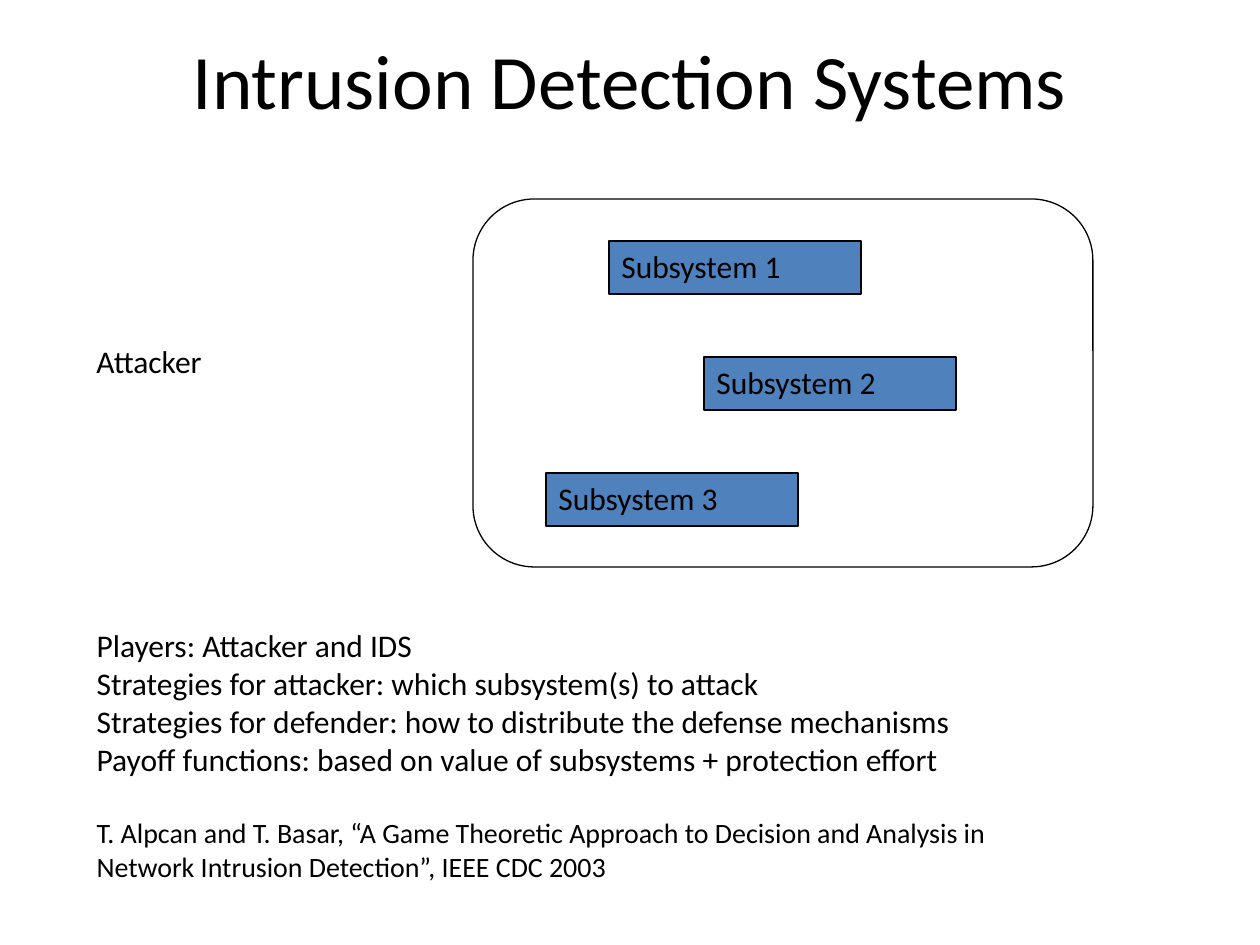
from dataclasses import dataclass

from pptx import Presentation
from pptx import util as u
from pptx.dml.color import RGBColor
from pptx.enum import shapes, text
from pptx.oxml.xmlchemy import OxmlElement

PX = 914400 / 126  # EMU per px


@dataclass(frozen=True)
class Theme:
    font: str = "Calibri"
    ink: RGBColor = RGBColor(0, 0, 0)
    block: RGBColor = RGBColor(0x4F, 0x81, 0xBD)
    title: int = 44
    body: int = 18
    cite: int = 16
    line: float = 0.75


T = Theme()
SUBSYSTEM_OFFSETS = (136, 231, 73)  # left edge inside the system outline
NOTES = (
    "Players: Attacker and IDS",
    "Strategies for attacker: which subsystem(s) to attack",
    "Strategies for defender: how to distribute the defense mechanisms",
    "Payoff functions: based on value of subsystems + protection effort",
)
CITATION = (
    "T. Alpcan and T. Basar, “A Game Theoretic Approach to Decision and Analysis in "
    "\vNetwork Intrusion Detection”, IEEE CDC 2003"
)


def emu(*lengths):
    return [u.Emu(round(n * PX)) for n in lengths]


def place(sp, box):
    sp.left, sp.top, sp.width, sp.height = emu(*box)


def style(p, size, align=text.PP_ALIGN.LEFT):
    p.alignment = align
    for r in p.runs:
        r.font.name, r.font.size = T.font, u.Pt(size)
        r.font.color.rgb = T.ink


def add_box(s, kind, box, fill=None):
    sp = s.shapes.add_shape(kind, *emu(*box))
    sp.shadow.inherit = False
    if fill is None:
        sp.fill.background()
    else:
        sp.fill.solid()
        sp.fill.fore_color.rgb = fill
    sp.line.color.rgb, sp.line.width = T.ink, u.Pt(T.line)
    return sp


def title(s, box):
    sp = s.shapes.title
    place(sp, box)
    tf = sp.text_frame
    tf.text = "Intrusion Detection Systems"
    tf.vertical_anchor = text.MSO_ANCHOR.MIDDLE
    style(tf.paragraphs[0], T.title, text.PP_ALIGN.CENTER)


def system(s, box):
    x, y, w, h = box
    # Subsystem blocks, evenly stepped down the outline
    for i, dx in enumerate(SUBSYSTEM_OFFSETS):
        sp = add_box(s, shapes.MSO_SHAPE.RECTANGLE,
                     (x + dx, y + 42 + i * 116, 252, 53), T.block)
        tf = sp.text_frame
        tf.text = f"Subsystem {i + 1}"
        tf.vertical_anchor = text.MSO_ANCHOR.TOP
        style(tf.paragraphs[0], T.body)
    # Outline around them
    add_box(s, shapes.MSO_SHAPE.ROUNDED_RECTANGLE, box)


def attacker(s, box):
    tf = s.shapes.add_textbox(*emu(*box)).text_frame
    tf.text = "Attacker"
    tf.word_wrap = False
    style(tf.paragraphs[0], T.body)


def notes(s, box):
    sp = s.placeholders[1]
    place(sp, box)
    tf = sp.text_frame
    tf.text = "\n".join((*NOTES, CITATION))
    tf.word_wrap = False
    tf.auto_size = text.MSO_AUTO_SIZE.NONE
    tf.vertical_anchor = text.MSO_ANCHOR.TOP
    for p in tf.paragraphs:
        style(p, T.body)
        p.space_before = u.Pt(0)
        # Plain lines: no bullet, no hanging indent
        pPr = p._p.get_or_add_pPr()
        pPr.set("marL", "0")
        pPr.set("indent", "0")
        pPr.append(OxmlElement("a:buNone"))
    # The citation stands one line apart
    style(p, T.cite)
    p.space_before = u.Pt(22)


def main():
    prs = Presentation()
    prs.slide_width, prs.slide_height = emu(1260, 945)
    s = prs.slides.add_slide(prs.slide_layouts[1])
    title(s, (63, 0, 1134, 158))
    system(s, (473, 199, 620, 368))
    attacker(s, (84, 336, 151, 50))
    notes(s, (84, 620, 1037, 271))
    prs.save("out.pptx")


if __name__ == "__main__":
    main()
